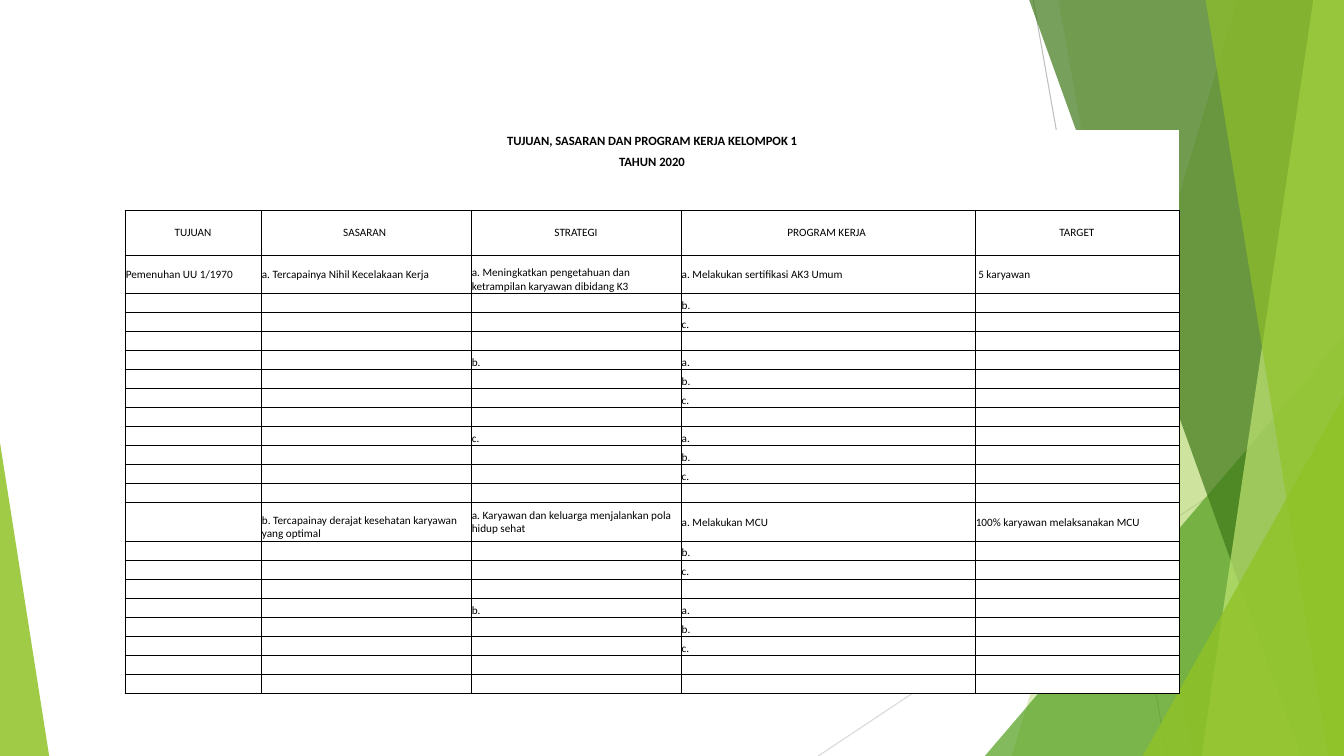
from lxml import etree
from pptx import Presentation
from pptx.dml.color import RGBColor
from pptx.enum.shapes import MSO_CONNECTOR, MSO_SHAPE
from pptx.enum.text import MSO_ANCHOR as ANCHOR, PP_ALIGN as ALIGN
from pptx.oxml.ns import qn
from pptx.util import Cm, Pt

COLORS = {
    "black": "000000", "white": "FFFFFF", "gray": "BFBFBF", "silver": "D9D9D9",
    "lime": "90C226", "green": "54A021", "forest": "3F7819", "pale": "C0E474",
}
W, H, TOP = 33.87, 19.05, -0.02
RAYS = [
    ([(31.19, TOP), (W, TOP), (W, H), (25.5, H)], "lime", 30),
    ([(26.67, TOP), (W, TOP), (W, H), (30.05, H)], "lime", 20),
]
BANDS = [
    ([(25.93, TOP), (W, TOP), (W, H), (32.79, H)], "forest", 70),
    ([(33.1, TOP), (W, TOP), (W, H), (30.28, H)], "pale", 70),
    ([(30.38, TOP), (W, TOP), (W, H), (33.48, H)], "lime", 65),
]
COLUMNS = [3.43, 5.29, 5.29, 7.41, 5.14]
TITLES = ["TUJUAN, SASARAN DAN PROGRAM KERJA KELOMPOK 1", "TAHUN 2020"]
HEADERS = ["TUJUAN", "SASARAN ", "STRATEGI", "PROGRAM KERJA ", "TARGET"]
EMPTY = [""] * 5
STRATEGY_1 = "a. Meningkatkan pengetahuan dan ketrampilan karyawan dibidang K3"
GOAL_2 = "b. Tercapainay derajat kesehatan karyawan yang optimal"
GOALS = [
    ["Pemenuhan UU 1/1970", "a. Tercapainya Nihil Kecelakaan Kerja", STRATEGY_1,
     "a. Melakukan sertifikasi AK3 Umum", " 5 karyawan"],
    ["", GOAL_2, "a. Karyawan dan keluarga menjalankan pola hidup sehat",
     "a. Melakukan MCU", "100% karyawan melaksanakan MCU"],
]
BOTTOM = {"a.", "b.", "c.", STRATEGY_1, GOAL_2}


def block(first):
    return [first] + [["", "", "", mark, ""] for mark in ("b.", "c.", "")]


def strategy(mark):
    return block(["", "", mark, "a.", ""])


class Deck:
    font = "Calibri"

    def __init__(self):
        self.prs = Presentation()
        self.prs.slide_width, self.prs.slide_height = Cm(W), Cm(H)
        self.s = self.prs.slides.add_slide(self.prs.slide_layouts[6])

    def rgb(self, color):
        return RGBColor.from_string(COLORS[color])

    def paint(self, sp, color, opacity):
        sp.shadow.inherit = False
        sp.line.fill.background()
        sp.fill.solid()
        sp.fill.fore_color.rgb = self.rgb(color)
        clr = next(sp._element.spPr.iter(qn("a:srgbClr")))
        etree.SubElement(clr, qn("a:alpha"), val=str(opacity * 1000))

    def line(self, start, end, color):
        points = [Cm(v) for v in start + end]
        sp = self.s.shapes.add_connector(MSO_CONNECTOR.STRAIGHT, *points)
        sp.line.color.rgb = self.rgb(color)
        sp.line.width = Pt(0.75)
        etree.SubElement(sp._element.spPr, qn("a:effectLst"))

    def polygon(self, points, color, opacity):
        points = [(Cm(x), Cm(y)) for x, y in points]
        builder = self.s.shapes.build_freeform(*points[0])
        builder.add_line_segments(points[1:], close=True)
        self.paint(builder.convert_to_shape(), color, opacity)

    def triangle(self, box, apex, color, opacity):
        sp = self.s.shapes.add_shape(
            MSO_SHAPE.ISOSCELES_TRIANGLE, *[Cm(v) for v in box])
        sp.adjustments[0] = apex
        self.paint(sp, color, opacity)

    def table(self, left, top, widths, heights):
        frame = self.s.shapes.add_table(
            len(heights), len(widths), Cm(left), Cm(top),
            Cm(sum(widths)), Cm(sum(heights)))
        tbl = frame.table
        tbl.first_row = tbl.horz_banding = False
        for col, width in zip(tbl.columns, widths):
            col.width = Cm(width)
        for row, height in zip(tbl.rows, heights):
            row.height = Cm(height)
        return tbl

    def cell(self, cell, text, borders="LRTB", size=8, bold=False, align=ALIGN.LEFT):
        cell.fill.solid()
        cell.fill.fore_color.rgb = self.rgb("white")
        cell.margin_left = cell.margin_right = cell.margin_top = Cm(0.02)
        cell.margin_bottom = 0
        cell.vertical_anchor = ANCHOR.BOTTOM if text in BOTTOM else ANCHOR.MIDDLE
        self.borders(cell, borders)
        p = cell.text_frame.paragraphs[0]
        p.alignment = align
        if not text:
            etree.SubElement(p._p, qn("a:endParaRPr"), sz=str(size * 100))
            return
        r = p.add_run()
        r.text = text
        r.font.name, r.font.size, r.font.bold = self.font, Pt(size), bold
        r.font.color.rgb = self.rgb("black")

    def borders(self, cell, sides):
        pr = cell._tc.get_or_add_tcPr()
        for i, side in enumerate("LRTB"):
            ln = etree.Element(qn(f"a:ln{side}"), w=str(Pt(0.5)))
            if side in sides:
                fill = etree.SubElement(ln, qn("a:solidFill"))
                etree.SubElement(fill, qn("a:srgbClr"), val=COLORS["black"])
            else:
                etree.SubElement(ln, qn("a:noFill"))
            pr.insert(i, ln)


def main():
    d = Deck()
    d.line((26.04, 0), (29.41, H), "gray")
    d.line((W, 10.24), (20.62, H), "silver")
    for ray in RAYS:
        d.polygon(*ray)
    d.triangle((24.82, 8.46, 9.05, 10.59), 1, "green", 72)
    for band in BANDS:
        d.polygon(*band)
    d.triangle((28.8, 9.98, 5.07, 9.07), 1, "lime", 80)
    d.triangle((0, 11.15, 1.24, 7.9), 0, "lime", 85)

    body = (block(GOALS[0]) + strategy("b.") + strategy("c.")
            + block(GOALS[1]) + strategy("b.") + [EMPTY])
    heights = [0.53, 0.53, 0.48, 0.48, 1.13]
    heights += [0.96 if row in GOALS else 0.48 for row in body]
    tbl = d.table(3.15, 3.28, COLUMNS, heights)
    for i, title in enumerate(TITLES):
        tbl.cell(i, 0).merge(tbl.cell(i, 4))
        d.cell(tbl.cell(i, 0), title, "", 9, True, ALIGN.CENTER)
    for j, header in enumerate(HEADERS):
        d.cell(tbl.cell(2, j), "", "")
        d.cell(tbl.cell(3, j), "", "B")
        d.cell(tbl.cell(4, j), header, align=ALIGN.CENTER)
    for i, row in enumerate(body, 5):
        for j, text in enumerate(row):
            d.cell(tbl.cell(i, j), text)
    d.prs.save("out.pptx")


if __name__ == "__main__":
    main()
